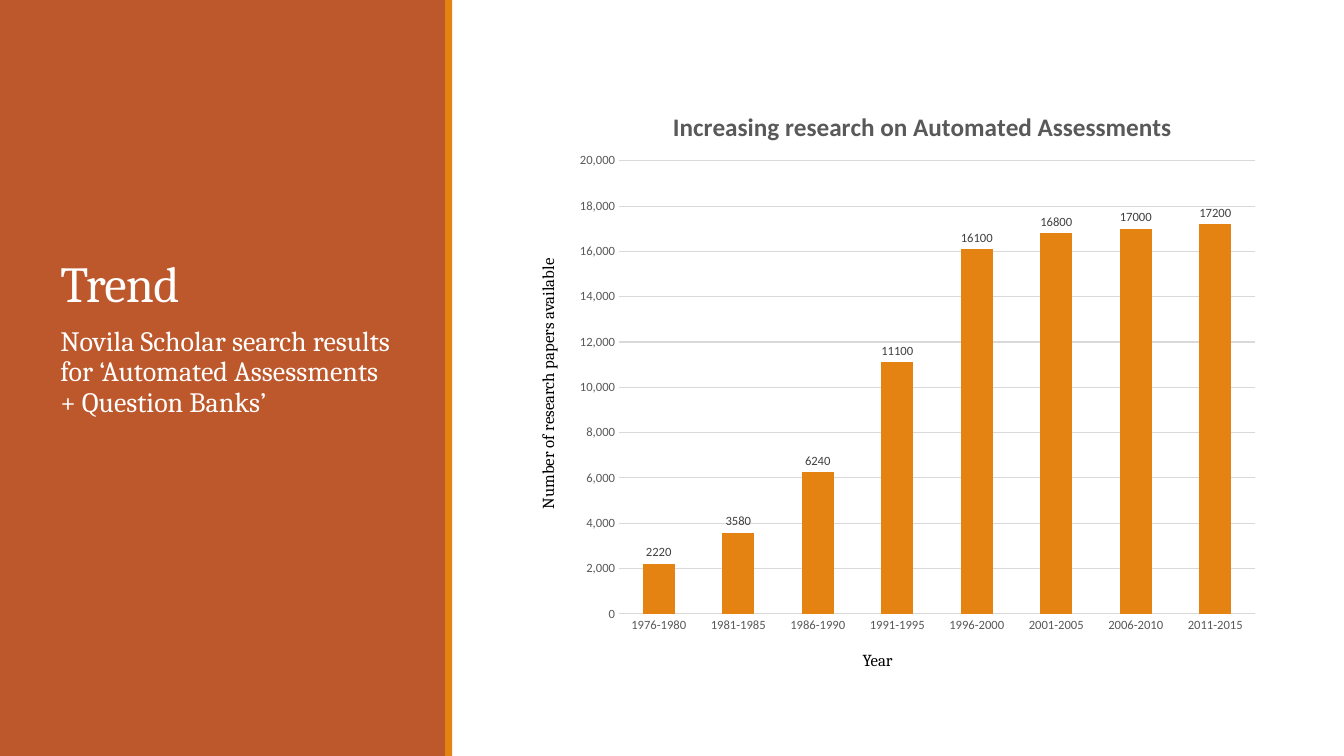
from lxml import etree
from pptx import Presentation
from pptx.chart.data import CategoryChartData
from pptx.dml.color import RGBColor
from pptx.enum.chart import XL_CHART_TYPE, XL_LABEL_POSITION, XL_TICK_MARK
from pptx.enum.shapes import MSO_SHAPE
from pptx.enum.text import MSO_ANCHOR
from pptx.oxml.ns import qn
from pptx.util import Pt

RECTANGLE = MSO_SHAPE.RECTANGLE
COLUMNS = XL_CHART_TYPE.COLUMN_CLUSTERED
OUTSIDE_END = XL_LABEL_POSITION.OUTSIDE_END
NO_TICK = XL_TICK_MARK.NONE
TOP, BOTTOM = MSO_ANCHOR.TOP, MSO_ANCHOR.BOTTOM

RUST = RGBColor(0xBD, 0x58, 0x2C)
ORANGE = RGBColor(0xE4, 0x83, 0x12)
WHITE = RGBColor(0xFF, 0xFF, 0xFF)
BLACK = RGBColor(0, 0, 0)
LABEL_GREY = RGBColor(0x40, 0x40, 0x40)
AXIS_GREY = RGBColor(0x59, 0x59, 0x59)
GRID_GREY = RGBColor(0xD9, 0xD9, 0xD9)

PAPERS = {
    "1976-1980": 2220,
    "1981-1985": 3580,
    "1986-1990": 6240,
    "1991-1995": 11100,
    "1996-2000": 16100,
    "2001-2005": 16800,
    "2006-2010": 17000,
    "2011-2015": 17200,
}


def add_band(page, left, top, width, height, colour):
    band = page.shapes.add_shape(RECTANGLE, Pt(left), Pt(top), Pt(width), Pt(height))
    band.shadow.inherit = False
    band.fill.solid()
    band.fill.fore_color.rgb = colour
    band.line.fill.background()


def style_font(font, size, colour, name="Calibri", bold=False):
    font.name = name
    font.size = Pt(size)
    font.bold = bold
    font.color.rgb = colour


def add_text(page, left, top, width, height, text, size, colour, anchor=TOP):
    box = page.shapes.add_textbox(Pt(left), Pt(top), Pt(width), Pt(height))
    frame = box.text_frame
    frame.word_wrap = True
    frame.vertical_anchor = anchor
    para = frame.paragraphs[0]
    span = para.add_run()
    span.text = text
    style_font(span.font, size, colour, "Cambria")
    return box, para, span


def add_side_panel(page, left, top, width, height):
    add_band(page, left, top, width - 4, height, RUST)
    add_band(page, left + width - 5, top, 5, height, ORANGE)
    _, para, span = add_text(page, left + 36, top + 46.8, 252, 180,
                             "Trend", 36, WHITE, BOTTOM)
    para.line_spacing = 0.85
    span.font._element.set("spc", "-50")
    _, para, _ = add_text(page, left + 36, top + 230.4, 252, 266.4,
                          "Novila Scholar search results for ‘Automated Assessments + Question Banks’",
                          20, WHITE)
    para.line_spacing = 0.9
    para.space_before = Pt(12)
    para.space_after = Pt(2)


def set_layout(parent, index, **settings):
    for former in parent.findall(qn("c:layout")):
        parent.remove(former)
    layout = etree.Element(qn("c:layout"))
    manual = etree.SubElement(layout, qn("c:manualLayout"))
    for tag, value in settings.items():
        etree.SubElement(manual, qn("c:" + tag)).set("val", str(value))
    parent.insert(index, layout)


def style_axis(axis):
    axis.major_tick_mark = NO_TICK
    axis.minor_tick_mark = NO_TICK
    axis.format.line.fill.background()
    style_font(axis.tick_labels.font, 9, AXIS_GREY)


def add_paper_chart(page, left, top, width, height):
    data = CategoryChartData()
    data.categories = list(PAPERS)
    data.add_series("Series 1", list(PAPERS.values()))
    chart = page.shapes.add_chart(COLUMNS, Pt(left), Pt(top), Pt(width), Pt(height), data).chart
    style_font(chart.font, 10, BLACK)
    chart.has_legend = False

    chart.has_title = True
    title = chart.chart_title
    span = title.text_frame.paragraphs[0].add_run()
    span.text = "Increasing research on Automated Assessments"
    style_font(span.font, 18, AXIS_GREY, bold=True)
    set_layout(title._element, 1, xMode="edge", yMode="edge", x=0.146, y=0.043)

    style_axis(chart.category_axis)
    values = chart.value_axis
    style_axis(values)
    values.minimum_scale = 0
    values.maximum_scale = 20000
    values.major_unit = 2000
    values.tick_labels.number_format = "#,##0"
    values.tick_labels.number_format_is_linked = False
    values.has_major_gridlines = True
    grid = values.major_gridlines.format.line
    grid.color.rgb = GRID_GREY
    grid.width = Pt(0.75)

    plot = chart.plots[0]
    plot.gap_width = 150
    plot.vary_by_categories = False
    bars = plot.series[0]
    bars.format.fill.solid()
    bars.format.fill.fore_color.rgb = ORANGE
    labels = bars.data_labels
    labels.show_value = True
    labels.position = OUTSIDE_END
    style_font(labels.font, 9, LABEL_GREY)
    plot_area = chart._chartSpace.find(".//" + qn("c:plotArea"))
    set_layout(plot_area, 0, layoutTarget="inner", xMode="edge", yMode="edge",
               x=0.076, y=0.142, w=0.904, h=0.803)


def add_chart_region(page, left, top, width, height):
    add_text(page, left + 229, top + height - 21.6, width - 229, 21.6, "Year", 12, BLACK)
    box, _, _ = add_text(page, left, top + 96.5, 26, 216.7,
                         "Number of research papers available", 12, BLACK)
    box.element.txBody.bodyPr.set("vert", "vert270")
    add_paper_chart(page, left + 23.8, top, width - 23.8, height - 21.6)


def main():
    deck = Presentation()
    deck.slide_width = Pt(960)
    deck.slide_height = Pt(540)
    page = deck.slides.add_slide(deck.slide_layouts[6])
    add_side_panel(page, 0, 0, 323, 540)
    add_chart_region(page, 380.2, 57.6, 526.4, 424.8)
    deck.save("out.pptx")


if __name__ == "__main__":
    main()
